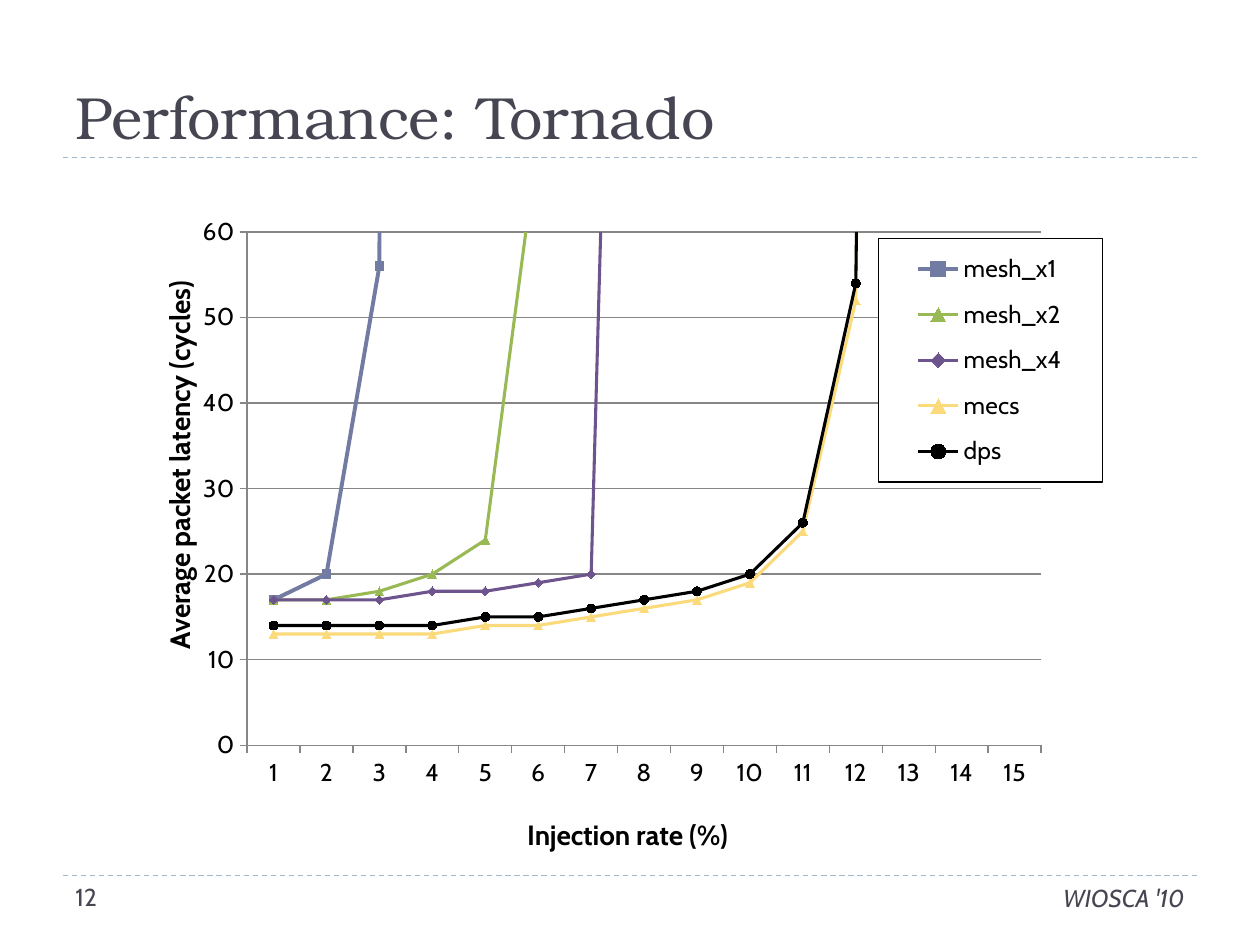
from lxml import etree
from pptx import Presentation
from pptx.chart.data import CategoryChartData
from pptx.dml.color import RGBColor
from pptx.enum.chart import XL_CHART_TYPE, XL_LEGEND_POSITION, XL_MARKER_STYLE, XL_TICK_MARK
from pptx.enum.dml import MSO_LINE
from pptx.enum.shapes import MSO_CONNECTOR
from pptx.enum.text import MSO_ANCHOR, PP_ALIGN
from pptx.oxml import parse_xml
from pptx.oxml.ns import nsdecls, qn
from pptx.util import Inches, Pt

SLATE = RGBColor(0x46, 0x46, 0x53)
RULE = RGBColor(0x9F, 0xB8, 0xCD)
GRID = RGBColor(0x86, 0x86, 0x86)
BLACK = RGBColor(0, 0, 0)
BLUE = RGBColor(0x72, 0x7C, 0xA3)
GREEN = RGBColor(0x98, 0xB9, 0x54)
PURPLE = RGBColor(0x6E, 0x54, 0x8D)
YELLOW = RGBColor(0xFA, 0xDA, 0x7A)

SERIF, SANS = "TeX Gyre Bonum", "Cabin"
LEFT, RIGHT = PP_ALIGN.LEFT, PP_ALIGN.RIGHT
TOP, BOTTOM = MSO_ANCHOR.TOP, MSO_ANCHOR.BOTTOM
SQUARE, TRIANGLE = XL_MARKER_STYLE.SQUARE, XL_MARKER_STYLE.TRIANGLE
DIAMOND, CIRCLE = XL_MARKER_STYLE.DIAMOND, XL_MARKER_STYLE.CIRCLE

MARGIN, CONTENT_W = 0.5, 9
TITLE_RULE_Y, FOOTER_RULE_Y = 1.25, 6.95

# name, colour, line width, marker, latency at injection rates 1 to 15
SERIES = [
    ("mesh_x1", BLUE, 2.25, SQUARE,
     (17, 20, 56, 3165, 3283, 3321, 3342, 3353, 3360, 3366, 3372, 3376, 3378, 3380, 3382)),
    ("mesh_x2", GREEN, 1.75, TRIANGLE,
     (17, 17, 18, 20, 24, 71, 1547, 1655, 1690, 1706, 1718, 1725, 1732, 1737, 1739)),
    ("mesh_x4", PURPLE, 1.75, DIAMOND,
     (17, 17, 17, 18, 18, 19, 20, 242, 333, 375, 636, 654, 703, 889, 1036)),
    ("mecs", YELLOW, 1.75, TRIANGLE,
     (13, 13, 13, 13, 14, 14, 15, 16, 17, 19, 25, 52, 518, 722, 770)),
    ("dps", BLACK, 1.75, CIRCLE,
     (14, 14, 14, 14, 15, 15, 16, 17, 18, 20, 26, 54, 513, 727, 771)),
]


def set_font(font, size, color=BLACK, name=SANS, bold=False, italic=False):
    font.size, font.name = Pt(size), name
    font.bold, font.italic = bold, italic
    font.color.rgb = color


def add_text(slide, text, box, size, name=SANS, align=LEFT, anchor=TOP, italic=False):
    sp = slide.shapes.add_textbox(*map(Inches, box))
    tf = sp.text_frame
    tf.word_wrap = True
    tf.vertical_anchor = anchor
    tf.text = text
    p = tf.paragraphs[0]
    p.alignment = align
    set_font(p.runs[0].font, size, SLATE, name, italic=italic)


def add_rule(slide, y):
    line = slide.shapes.add_connector(
        MSO_CONNECTOR.STRAIGHT, Inches(MARGIN), Inches(y), Inches(MARGIN + CONTENT_W), Inches(y))
    line.line.color.rgb = RULE
    line.line.width = Pt(0.75)
    line.line.dash_style = MSO_LINE.DASH
    etree.SubElement(line._element.spPr, qn("a:effectLst"))


def set_layout(element, index, inner=False, **shares):
    """Place a chart part by shares (x, y, w, h) of the chart's size."""
    for old in element.findall(qn("c:layout")):
        element.remove(old)
    layout = etree.Element(qn("c:layout"))
    manual = etree.SubElement(layout, qn("c:manualLayout"))
    if inner:
        etree.SubElement(manual, qn("c:layoutTarget"), val="inner")
    for key in ("x", "y"):
        etree.SubElement(manual, qn(f"c:{key}Mode"), val="edge")
    for key, share in shares.items():
        etree.SubElement(manual, qn(f"c:{key}"), val=str(share))
    element.insert(index, layout)


def style_axis(axis, title, x, y):
    axis.major_tick_mark = XL_TICK_MARK.OUTSIDE
    axis.minor_tick_mark = XL_TICK_MARK.NONE
    axis.format.line.color.rgb = GRID
    set_font(axis.tick_labels.font, 14)
    tf = axis.axis_title.text_frame
    tf.text = title
    set_font(tf.paragraphs[0].runs[0].font, 16, bold=True)
    set_layout(axis.axis_title._element, 1, x=x, y=y)


def style_series(series, color, width, marker):
    series.smooth = False
    series.format.line.color.rgb = color
    series.format.line.width = Pt(width)
    series.marker.style = marker
    series.marker.size = 5
    series.marker.format.fill.solid()
    series.marker.format.fill.fore_color.rgb = color
    series.marker.format.line.color.rgb = color


def add_legend(chart):
    chart.has_legend = True
    legend = chart.legend
    legend.position = XL_LEGEND_POSITION.RIGHT
    legend.include_in_layout = False
    set_font(legend.font, 14)
    element = legend._element
    set_layout(element, 1, x=0.76, y=0.06, w=0.22, h=0.37)
    element.find(qn("c:txPr")).addprevious(parse_xml(
        f'<c:spPr {nsdecls("c", "a")}>'
        '<a:solidFill><a:srgbClr val="FFFFFF"/></a:solidFill>'
        '<a:ln w="9525"><a:solidFill><a:srgbClr val="000000"/></a:solidFill></a:ln>'
        '</c:spPr>'))


def add_latency_chart(slide):
    data = CategoryChartData()
    data.categories = [str(rate) for rate in range(1, 16)]
    for name, *_, values in SERIES:
        data.add_series(name, values)
    box = map(Inches, (0.83, 1.58, 8.08, 5.25))
    chart = slide.shapes.add_chart(XL_CHART_TYPE.LINE_MARKERS, *box, data).chart
    chart.has_title = False
    set_font(chart.font, 10)
    plot = chart.plots[0]
    plot.vary_by_categories = False
    for series, (_, color, width, marker, _) in zip(plot.series, SERIES):
        style_series(series, color, width, marker)

    style_axis(chart.category_axis, "Injection rate (%)", 0.41, 0.93)
    axis = chart.value_axis
    style_axis(axis, "Average packet latency (cycles)", 0.05, 0.12)
    axis.minimum_scale, axis.maximum_scale, axis.major_unit = 0, 60, 10
    axis.has_major_gridlines = True
    axis.major_gridlines.format.line.color.rgb = GRID
    add_legend(chart)
    plot_area = chart._chartSpace.chart.plotArea
    set_layout(plot_area, 0, inner=True, x=0.14, y=0.05, w=0.78, h=0.78)


def main():
    prs = Presentation()
    prs.slide_width, prs.slide_height = Inches(10), Inches(7.5)
    slide = prs.slides.add_slide(prs.slide_layouts[6])
    for y in (FOOTER_RULE_Y, TITLE_RULE_Y):
        add_rule(slide, y)
    add_text(slide, "Performance: Tornado", (MARGIN, TITLE_RULE_Y - 1, CONTENT_W, 1), 34,
             name=SERIF, anchor=BOTTOM)
    add_text(slide, "WIOSCA '10", (2.67, FOOTER_RULE_Y + 0.01, 6.83, 0.4), 14,
             align=RIGHT, italic=True)
    add_text(slide, "12", (MARGIN, FOOTER_RULE_Y, 2.08, 0.4), 14)
    add_latency_chart(slide)
    prs.save("out.pptx")


if __name__ == "__main__":
    main()
